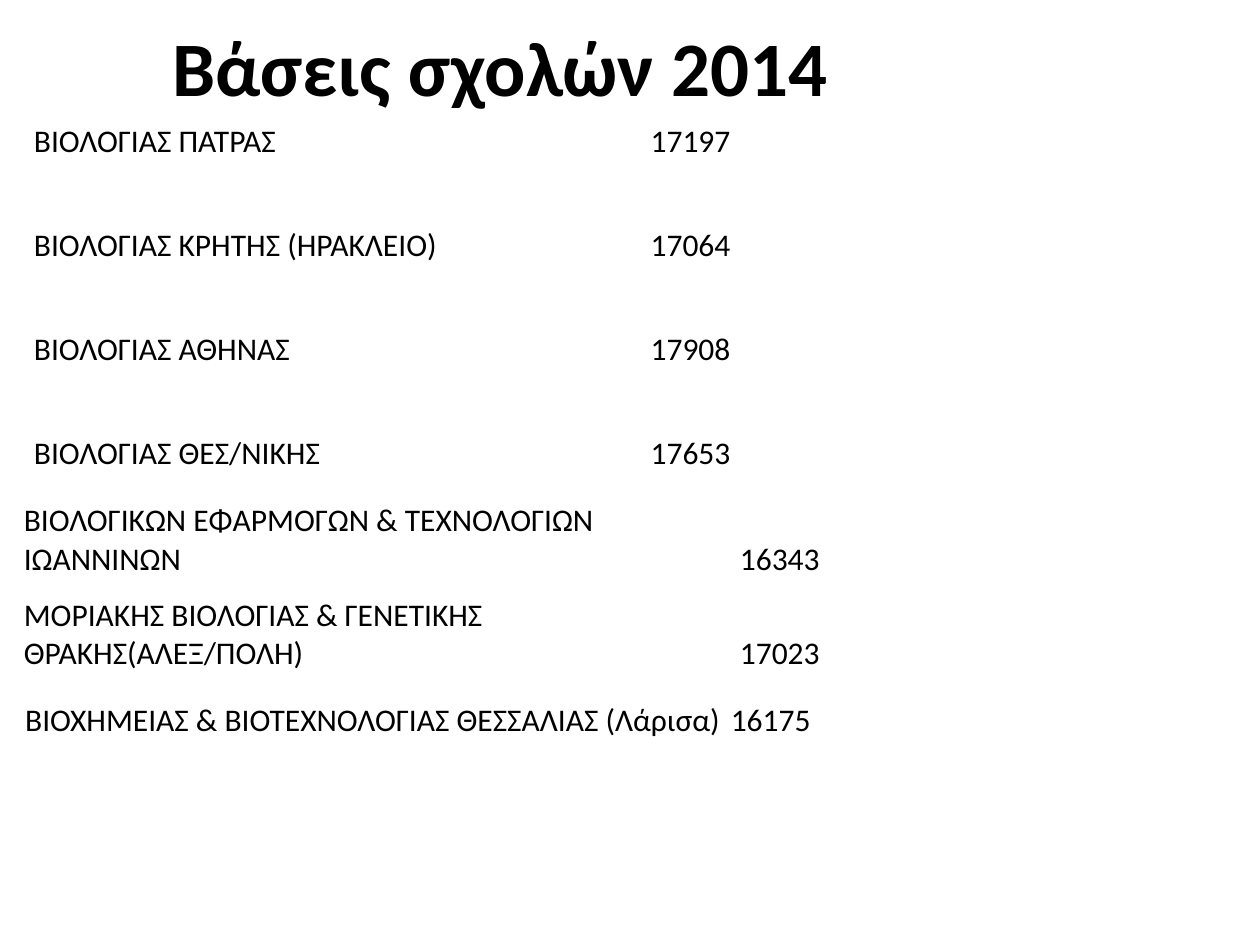
from lxml.etree import SubElement
from pptx import Presentation
from pptx.dml.color import RGBColor
from pptx.enum.text import MSO_ANCHOR as Anchor, PP_ALIGN as Align
from pptx.oxml.ns import qn
from pptx.util import Pt

BLACK = RGBColor(0x00, 0x00, 0x00)
FONT = "Calibri"


def style(para, size, align, bold=False):
    para.alignment = align
    for run in para.runs:
        run.font.name = FONT
        run.font.size = Pt(size)
        run.font.bold = bold
        run.font.color.rgb = BLACK


def clear(cell):
    """Remove the borders and the fill; borders must precede the fill."""
    props = cell._tc.get_or_add_tcPr()
    for side in ("a:lnL", "a:lnR", "a:lnT", "a:lnB"):
        line = SubElement(props, qn(side), w="0")
        SubElement(line, qn("a:noFill"))
    cell.fill.background()


prs = Presentation()
prs.slide_width, prs.slide_height = Pt(720), Pt(540)
slide = prs.slides.add_slide(prs.slide_layouts[5])

title = slide.shapes.title
title.left, title.top = Pt(-20), Pt(-41.5)
title.width, title.height = Pt(612), Pt(158.5)
frame = title.text_frame
frame.text = "Βάσεις σχολών 2014"
frame.word_wrap = True
frame.vertical_anchor = Anchor.MIDDLE
style(frame.paragraphs[0], 44, Align.CENTER, True)

# left, top, column widths, row height, cell margin, anchor, score alignment, rows
tables = [
    (14.4, 37.5, (350, 58), 59.5, 5.04, Anchor.BOTTOM, Align.RIGHT, [
        ("ΒΙΟΛΟΓΙΑΣ ΠΑΤΡΑΣ", "17197"),
        ("ΒΙΟΛΟΓΙΑΣ ΚΡΗΤΗΣ (ΗΡΑΚΛΕΙΟ)", "17064"),
        ("ΒΙΟΛΟΓΙΑΣ ΑΘΗΝΑΣ", "17908"),
        ("ΒΙΟΛΟΓΙΑΣ ΘΕΣ/ΝΙΚΗΣ", "17653"),
    ]),
    (8.6, 281.8, (403.2, 61.6), 53.6, 5.04, Anchor.BOTTOM, Align.RIGHT, [
        ("ΒΙΟΛΟΓΙΚΩΝ ΕΦΑΡΜΟΓΩΝ & ΤΕΧΝΟΛΟΓΙΩΝ ΙΩΑΝΝΙΝΩΝ", "16343"),
        ("ΜΟΡΙΑΚΗΣ ΒΙΟΛΟΓΙΑΣ & ΓΕΝΕΤΙΚΗΣ ΘΡΑΚΗΣ(ΑΛΕΞ/ΠΟΛΗ)", "17023"),
    ]),
    (14.4, 395, (403.2, 75.6), 33.8, 0, Anchor.MIDDLE, Align.LEFT, [
        ("ΒΙΟΧΗΜΕΙΑΣ & ΒΙΟΤΕΧΝΟΛΟΓΙΑΣ ΘΕΣΣΑΛΙΑΣ (Λάρισα)", "16175"),
    ]),
]

for left, top, widths, height, margin, anchor, align, rows in tables:
    table = slide.shapes.add_table(
        len(rows), 2, Pt(left), Pt(top),
        Pt(sum(widths)), Pt(height * len(rows))).table
    table.first_row = table.horz_banding = False
    for col, width in zip(table.columns, widths):
        col.width = Pt(width)
    for r, row in enumerate(rows):
        table.rows[r].height = Pt(height)
        for c, text in enumerate(row):
            cell = table.cell(r, c)
            clear(cell)
            cell.vertical_anchor = anchor
            cell.margin_left = cell.margin_right = Pt(margin)
            cell.margin_top = cell.margin_bottom = Pt(margin)
            cell.text_frame.text = text
            style(cell.text_frame.paragraphs[0], 18,
                  align if c else Align.LEFT)

prs.save("out.pptx")
